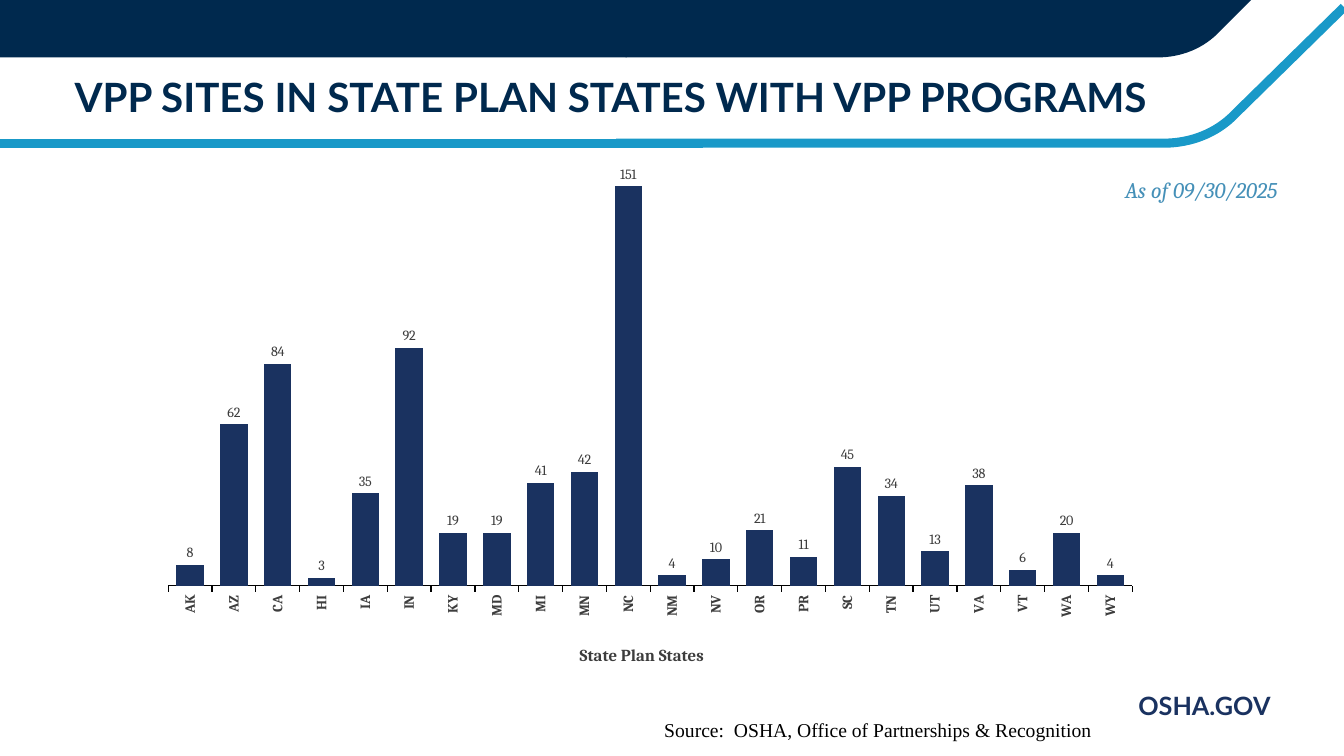
from lxml import etree
from pptx import Presentation
from pptx.chart.data import CategoryChartData
from pptx.dml.color import RGBColor
from pptx.enum.chart import XL_CHART_TYPE, XL_LABEL_POSITION, XL_TICK_LABEL_POSITION, XL_TICK_MARK
from pptx.enum.shapes import MSO_CONNECTOR, MSO_SHAPE
from pptx.enum.text import MSO_ANCHOR, MSO_AUTO_SIZE, PP_ALIGN
from pptx.oxml.ns import qn
from pptx.util import Inches, Pt

COLUMNS = XL_CHART_TYPE.COLUMN_CLUSTERED
OUTSIDE_END = XL_LABEL_POSITION.OUTSIDE_END
LABELS_LOW, LABELS_NONE = XL_TICK_LABEL_POSITION.LOW, XL_TICK_LABEL_POSITION.NONE
TICK_OUT, TICK_NONE = XL_TICK_MARK.OUTSIDE, XL_TICK_MARK.NONE
STRAIGHT, RECT = MSO_CONNECTOR.STRAIGHT, MSO_SHAPE.RECTANGLE
TOP, MIDDLE = MSO_ANCHOR.TOP, MSO_ANCHOR.MIDDLE
LEFT, CENTER, RIGHT = PP_ALIGN.LEFT, PP_ALIGN.CENTER, PP_ALIGN.RIGHT
NO_AUTOFIT = MSO_AUTO_SIZE.NONE

COLORS = {"navy": "00294E", "bar": "1A3260", "stripe": "1999C8",
          "date": "4590B8", "label": "3D3D3D", "black": "000000"}

SITES = {"AK": 8, "AZ": 61, "CA": 84, "HI": 3, "IA": 35, "IN": 90, "KY": 20, "MD": 20,
         "MI": 39, "MN": 43, "NC": 151, "NM": 4, "NV": 10, "OR": 21, "PR": 11, "SC": 45,
         "TN": 34, "UT": 13, "VA": 38, "VT": 6, "WA": 20, "WY": 4}
# Labels whose wording differs from the plotted value
LABEL_TEXT = {"AZ": "62", "IN": "92", "KY": "19", "MD": "19", "MI": "41", "MN": "42"}


def rgb(name):
    return RGBColor.from_string(COLORS[name])


def style_font(font, size, color, name="Cambria", bold=False, italic=False):
    font.size, font.name, font.bold, font.italic = Pt(size), name, bold, italic
    font.color.rgb = rgb(color)


def write(tf, text, align=LEFT, anchor=TOP, inset=True, **font):
    tf.word_wrap, tf.auto_size, tf.vertical_anchor = True, NO_AUTOFIT, anchor
    tf.margin_left = tf.margin_right = Inches(0.1 if inset else 0)
    tf.margin_top = tf.margin_bottom = Inches(0.05 if inset else 0)
    p = tf.paragraphs[0]
    p.alignment = align
    r = p.add_run()
    r.text = text
    style_font(r.font, **font)


def add_text(s, box, text, **fmt):
    write(s.shapes.add_textbox(*map(Inches, box)).text_frame, text, **fmt)


def curve(p0, p1, p2, p3, steps=16):
    """Points along a cubic Bezier curve."""
    points = []
    for i in range(steps + 1):
        t = i / steps
        weights = ((1 - t) ** 3, 3 * t * (1 - t) ** 2, 3 * t * t * (1 - t), t ** 3)
        points.append(tuple(sum(w * q[k] for w, q in zip(weights, (p0, p1, p2, p3)))
                            for k in (0, 1)))
    return points


def add_outline(s, x, y, points, closed):
    emu = [(Inches(x + px), Inches(y + py)) for px, py in points]
    builder = s.shapes.build_freeform(*emu[0], scale=1.0)
    builder.add_line_segments(emu[1:], close=closed)
    sp = builder.convert_to_shape()
    sp.shadow.inherit = False
    return sp


def fill_navy(sp):
    sp.shadow.inherit = False
    sp.fill.solid()
    sp.fill.fore_color.rgb = rgb("navy")
    sp.line.fill.background()


def add_banner(s, x, y, w, h):
    """Navy band whose right end curves up to the top edge."""
    half = w / 2
    bend = curve((w - 0.93, h), (w - 0.69, h), (w - 0.47, h - 0.09), (w - 0.31, h - 0.26))
    fill_navy(add_outline(s, x, y, [(half, 0), (half, h), *bend, (w, 0)], True))
    fill_navy(s.shapes.add_shape(RECT, *map(Inches, (x, y, half + 0.01, h))))


def add_line(s, x1, x2, y, width):
    line = s.shapes.add_connector(STRAIGHT, *map(Inches, (x1, y, x2, y)))
    line.line.color.rgb, line.line.width = rgb("stripe"), Pt(width)
    etree.SubElement(line.element.spPr, qn("a:effectLst"))


def add_stripe(s, x, y, w, h):
    """Blue rule that bends upward to the right edge."""
    straight = 6.11
    bend = curve((w - 1.78, h), (w - 1.52, h), (w - 1.26, h - 0.1), (w - 1.08, h - 0.29))
    sp = add_outline(s, x, y, [(straight, h), *bend, (w, 0)], False)
    sp.fill.background()
    sp.line.color.rgb, sp.line.width = rgb("stripe"), Pt(6.5)
    add_line(s, x, x + straight, y + h, 6.5)
    add_line(s, x + 5.25, x + 6.97, y + h + 0.01, 5.5)


def set_layout(parent, index, **values):
    """Give a chart part a manual layout in fractions of the chart."""
    layout = parent.find(qn("c:layout"))
    if layout is None:
        layout = etree.Element(qn("c:layout"))
        parent.insert(index, layout)
    manual = etree.SubElement(layout, qn("c:manualLayout"))
    for tag, value in values.items():
        etree.SubElement(manual, qn(f"c:{tag}")).set("val", str(value))


def add_site_chart(s, x, y, w, h):
    data = CategoryChartData()
    data.categories = list(SITES)
    data.add_series("Series 1", list(SITES.values()))
    chart = s.shapes.add_chart(COLUMNS, *map(Inches, (x, y, w, h)), data).chart
    chart.has_title = chart.has_legend = False
    style_font(chart.font, 10.1, "label", bold=True)

    cat = chart.category_axis
    cat.tick_label_position, cat.major_tick_mark = LABELS_LOW, TICK_OUT
    cat.has_major_gridlines = False
    cat.format.line.color.rgb, cat.format.line.width = rgb("black"), Pt(0.88)
    style_font(cat.tick_labels.font, 10.1, "label", bold=True)
    chart.element.xpath(".//c:catAx/c:txPr/a:bodyPr")[0].set("rot", "-5400000")
    write_title = cat.axis_title.text_frame.paragraphs[0].add_run()
    write_title.text = "State Plan States"
    style_font(write_title.font, 12, "label", bold=True)
    set_layout(cat.axis_title.element, 1, xMode="edge", yMode="edge", x=0.44, y=0.89)

    val = chart.value_axis
    val.minimum_scale, val.maximum_scale = 0, 160
    val.has_major_gridlines = False
    val.tick_label_position, val.major_tick_mark = LABELS_NONE, TICK_NONE
    val.format.line.fill.background()

    plot = chart.plots[0]
    plot.gap_width, plot.vary_by_categories = 60, False
    series = plot.series[0]
    series.format.fill.solid()
    series.format.fill.fore_color.rgb = rgb("bar")
    labels = series.data_labels
    labels.show_value, labels.position = True, OUTSIDE_END
    style_font(labels.font, 10.1, "label")
    for i, state in enumerate(SITES):
        if state in LABEL_TEXT:
            label = series.points[i].data_label
            r = label.text_frame.paragraphs[0].add_run()
            r.text = LABEL_TEXT[state]
            style_font(r.font, 10.1, "label")
            label.position = OUTSIDE_END
    set_layout(chart.element.xpath(".//c:plotArea")[0], 0, layoutTarget="inner",
               xMode="edge", yMode="edge", x=0.032, y=0.019, w=0.963, h=0.769)


def add_title(s, x, y, w, h):
    title = s.shapes.title
    title.left, title.top, title.width, title.height = map(Inches, (x, y, w, h))
    write(title.text_frame, "VPP SITES IN STATE PLAN STATES WITH VPP PROGRAMS",
          anchor=MIDDLE, size=28.8, color="navy", name="Lato", bold=True)


def main():
    prs = Presentation()
    prs.slide_width, prs.slide_height = Inches(13.33), Inches(7.5)
    s = prs.slides.add_slide(prs.slide_layouts[5])
    add_text(s, (6.03, 6.8, 6.67, 0.4), "OSHA.GOV", align=RIGHT,
             size=18, color="bar", name="Lato", bold=True)
    add_stripe(s, 0, 0.07, 13.33, 1.35)
    add_banner(s, 0, 0, 12.41, 0.57)
    add_title(s, 0.64, 0.68, 10.9, 0.56)
    add_site_chart(s, 1.35, 1.51, 9.93, 5.46)
    add_text(s, (10.5, 1.51, 2.83, 0.75), "As of 09/30/2025", align=CENTER, anchor=MIDDLE,
             size=16, color="date", italic=True)
    add_text(s, (6.24, 7.12, 4.59, 0.38), "Source:  OSHA, Office of Partnerships & Recognition",
             align=RIGHT, inset=False, size=14, color="black", name="Times New Roman")
    prs.save("out.pptx")


if __name__ == "__main__":
    main()
